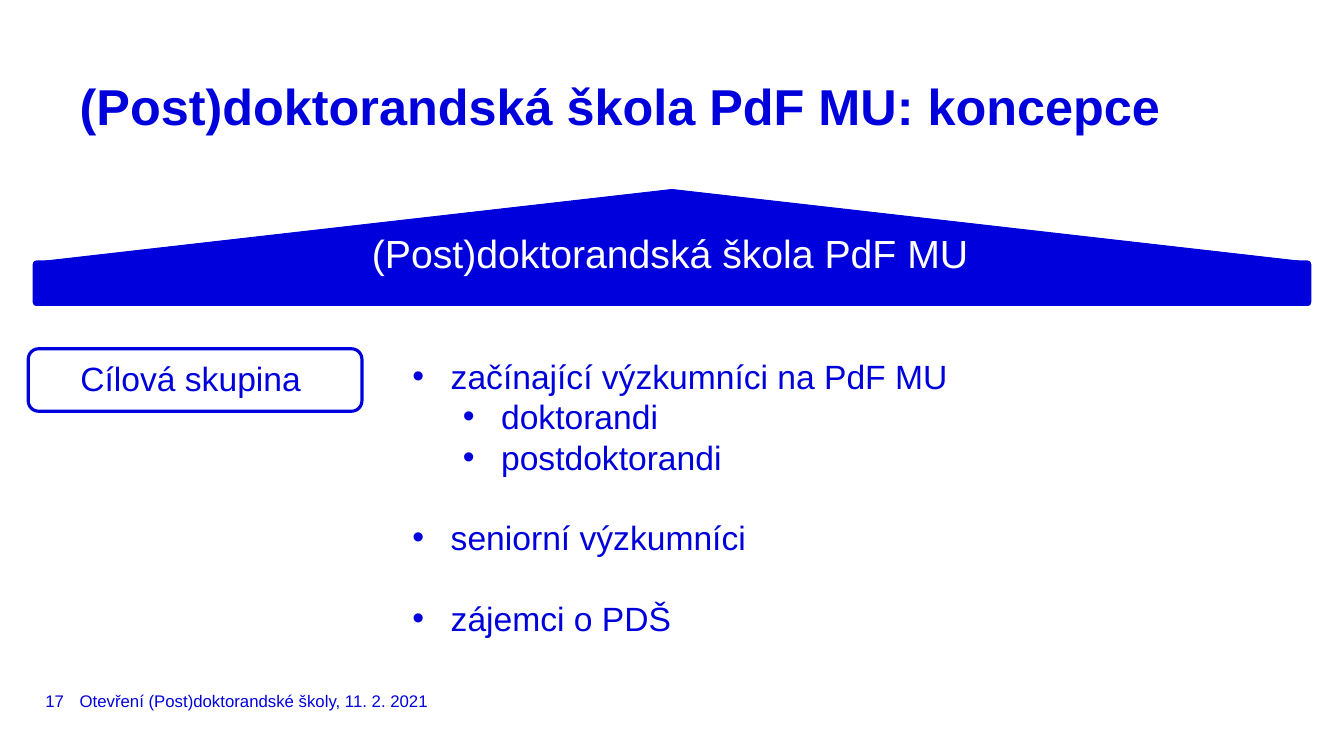
from dataclasses import dataclass

from lxml import etree
from pptx import Presentation
from pptx import util as u
from pptx.dml.color import RGBColor
from pptx.enum import shapes, text
from pptx.oxml.ns import qn


@dataclass(frozen=True)
class Theme:
    font: str = "Arial"
    blue: RGBColor = RGBColor(0x00, 0x00, 0xDC)
    white: RGBColor = RGBColor(0xFF, 0xFF, 0xFF)
    title: float = 36
    roof: float = 28
    body: float = 24
    footer: float = 12
    title_pitch: float = 40
    body_pitch: float = 28.8


@dataclass(frozen=True)
class Box:
    left: float
    top: float
    width: float
    height: float

    def lengths(self) -> tuple:
        return tuple(u.Inches(v) for v in (self.left, self.top, self.width, self.height))


@dataclass(frozen=True)
class Panel:
    kind: shapes.MSO_SHAPE
    box: Box
    fill: RGBColor
    line: RGBColor
    line_width: float
    rounding: float | None = None


@dataclass(frozen=True)
class Label:
    words: str
    box: Box
    size: float
    color: RGBColor
    align: text.PP_ALIGN = text.PP_ALIGN.LEFT
    anchor: text.MSO_ANCHOR = text.MSO_ANCHOR.TOP
    wrap: bool = True
    inset: bool = True


@dataclass(frozen=True)
class Bullet:
    words: str
    level: int = 0
    gap_before: bool = False


THEME = Theme()
MIDDLE = text.MSO_ANCHOR.MIDDLE

PANELS = [
    Panel(shapes.MSO_SHAPE.ROUNDED_RECTANGLE, Box(0.31, 2.57, 12.71, 0.48),
          THEME.blue, THEME.white, 2, 0.1),
    Panel(shapes.MSO_SHAPE.ISOSCELES_TRIANGLE, Box(0.45, 1.88, 12.43, 0.71),
          THEME.blue, THEME.blue, 0.75),
    Panel(shapes.MSO_SHAPE.ROUNDED_RECTANGLE, Box(0.28, 3.46, 3.31, 0.62),
          THEME.white, THEME.blue, 2.25),
]

LABELS = [
    Label("Otevření (Post)doktorandské školy, 11. 2. 2021", Box(0.79, 6.81, 8.66, 0.28),
          THEME.footer, THEME.blue, anchor=MIDDLE, inset=False),
    Label("17", Box(0.45, 6.81, 0.28, 0.28),
          THEME.footer, THEME.blue, anchor=MIDDLE, wrap=False, inset=False),
    Label("(Post)doktorandská škola PdF MU", Box(3.59, 2.23, 6.19, 1.04),
          THEME.roof, THEME.white, wrap=False),
    Label("Cílová skupina", Box(0.42, 3.5, 2.94, 0.5),
          THEME.body, THEME.blue, align=text.PP_ALIGN.CENTER),
]

TARGET_GROUPS = [
    Bullet("začínající výzkumníci na PdF MU"),
    Bullet("doktorandi", level=1),
    Bullet("postdoktorandi", level=1),
    Bullet("seniorní výzkumníci", gap_before=True),
    Bullet("zájemci o PDŠ", gap_before=True),
]


def style_font(paragraph, size: float, color: RGBColor, bold: bool = False) -> None:
    for run in paragraph.runs:
        run.font.name = THEME.font
        run.font.size = u.Pt(size)
        run.font.bold = bold
        run.font.color.rgb = color


def clear_margins(frame) -> None:
    frame.margin_left = frame.margin_top = frame.margin_right = frame.margin_bottom = 0


def place(shape, box: Box) -> None:
    shape.left, shape.top, shape.width, shape.height = box.lengths()


def add_panel(slide, panel: Panel) -> None:
    shape = slide.shapes.add_shape(panel.kind, *panel.box.lengths())
    shape.shadow.inherit = False
    shape.fill.solid()
    shape.fill.fore_color.rgb = panel.fill
    shape.line.color.rgb = panel.line
    shape.line.width = u.Pt(panel.line_width)
    if panel.rounding is not None:
        shape.adjustments[0] = panel.rounding


def add_label(slide, label: Label) -> None:
    frame = slide.shapes.add_textbox(*label.box.lengths()).text_frame
    frame.word_wrap = label.wrap
    frame.vertical_anchor = label.anchor
    if not label.inset:
        clear_margins(frame)
    frame.text = label.words
    frame.paragraphs[0].alignment = label.align
    style_font(frame.paragraphs[0], label.size, label.color)


def set_title(title, words: str, box: Box) -> None:
    place(title, box)
    frame = title.text_frame
    frame.auto_size = text.MSO_AUTO_SIZE.NONE
    frame.vertical_anchor = text.MSO_ANCHOR.TOP
    clear_margins(frame)
    frame.text = words
    heading = frame.paragraphs[0]
    heading.alignment = text.PP_ALIGN.LEFT
    heading.line_spacing = u.Pt(THEME.title_pitch)
    style_font(heading, THEME.title, THEME.blue, bold=True)


def add_bullet_mark(paragraph, level: int) -> None:
    properties = paragraph._p.get_or_add_pPr()
    properties.set("marL", str(u.Inches(0.38 + 0.5 * level)))
    properties.set("indent", str(u.Inches(-0.38)))
    etree.SubElement(properties, qn("a:buFont")).set("typeface", THEME.font)
    etree.SubElement(properties, qn("a:buChar")).set("char", "•")


def set_bullets(body, bullets: list[Bullet], box: Box) -> None:
    place(body, box)
    frame = body.text_frame
    frame.auto_size = text.MSO_AUTO_SIZE.NONE
    frame.vertical_anchor = text.MSO_ANCHOR.TOP
    frame.text = "\n".join(bullet.words for bullet in bullets)
    for paragraph, bullet in zip(frame.paragraphs, bullets):
        paragraph.level = bullet.level
        add_bullet_mark(paragraph, bullet.level)
        paragraph.line_spacing = u.Pt(THEME.body_pitch)
        paragraph.space_before = u.Pt(THEME.body_pitch if bullet.gap_before else 0)
        style_font(paragraph, THEME.body, THEME.blue)


def main() -> None:
    deck = Presentation()
    deck.slide_width, deck.slide_height = u.Inches(13.33), u.Inches(7.5)
    slide = deck.slides.add_slide(deck.slide_layouts[1])
    set_title(slide.shapes.title, "(Post)doktorandská škola PdF MU: koncepce",
              Box(0.79, 0.79, 11.76, 0.49))
    set_bullets(slide.placeholders[1], TARGET_GROUPS, Box(3.99, 3.48, 9.06, 3.33))
    for panel in PANELS:
        add_panel(slide, panel)
    for label in LABELS:
        add_label(slide, label)
    deck.save("out.pptx")


if __name__ == "__main__":
    main()
